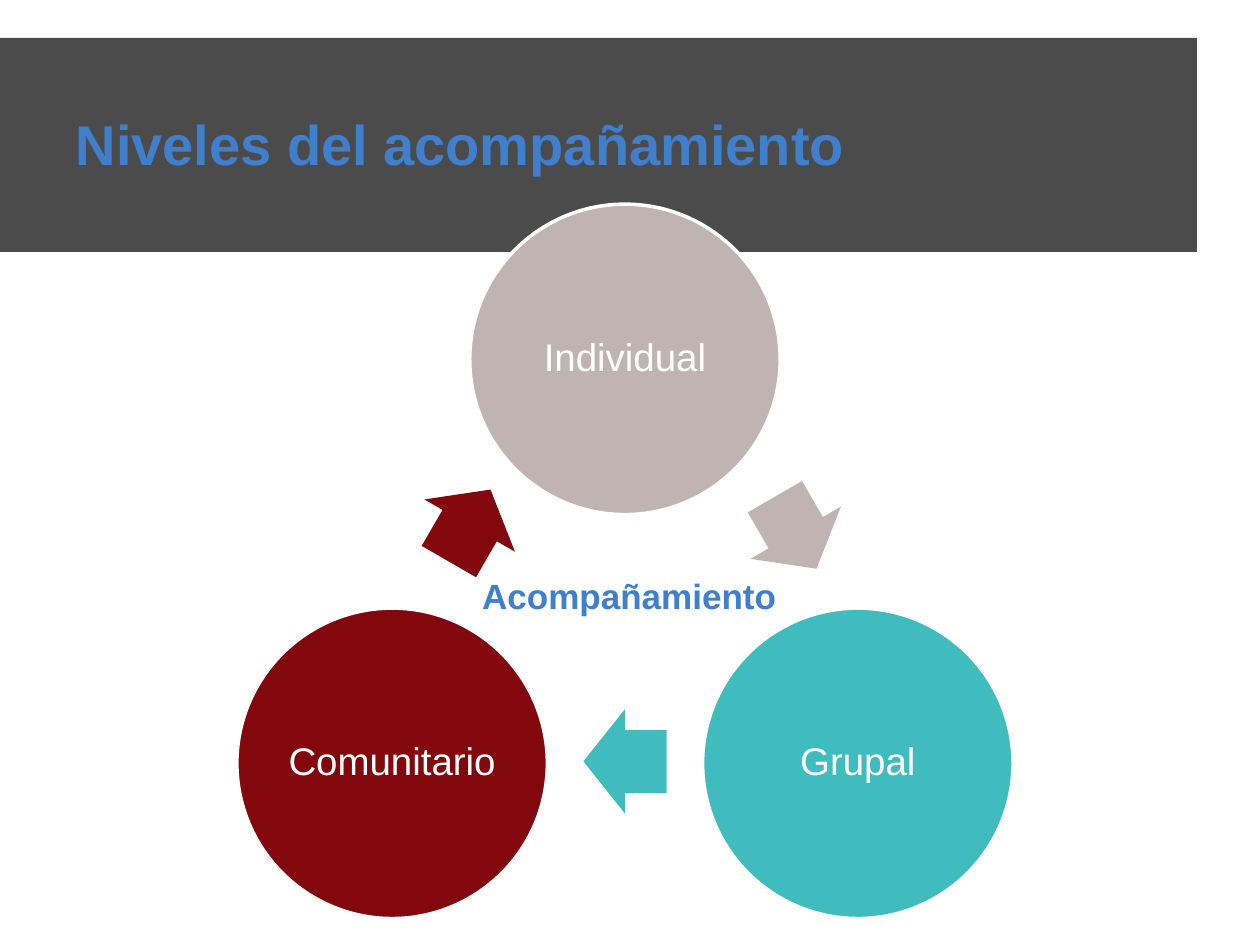
from lxml.etree import SubElement
from pptx import Presentation
from pptx.dml.color import RGBColor
from pptx.enum.shapes import MSO_SHAPE as Shape
from pptx.enum.text import MSO_ANCHOR as Anchor, PP_ALIGN as Align
from pptx.util import Inches, Pt

WIDTH, HEIGHT = 10, 7.5
COLORS = {
    "band": "4B4B4B",
    "accent": "407FCC",
    "white": "FFFFFF",
    "individual": "C0B4B3",
    "grupal": "41BCBE",
    "comunitario": "83080D",
}
LEVELS = [
    ("Individual", "individual", (0.3, 0), (0.72, 0.46), 60),
    ("Grupal", "grupal", (0.6, 1), (0.5, 0.78), 180),
    ("Comunitario", "comunitario", (0, 1), (0.3, 0.45), 300),
]


def rgb(name):
    """Return the named palette colour."""
    return RGBColor.from_string(COLORS[name])


def write(frame, text, size, color, bold=False, align=Align.LEFT,
          anchor=Anchor.MIDDLE, wrap=True, spacing=1.0, inset=None):
    """Write one formatted paragraph into a text frame."""
    frame.word_wrap = wrap
    frame.vertical_anchor = anchor
    if inset is not None:
        frame.margin_left = frame.margin_right = Inches(inset)
        frame.margin_top = frame.margin_bottom = Inches(inset)
    paragraph = frame.paragraphs[0]
    paragraph.alignment = align
    paragraph.line_spacing = spacing
    run = paragraph.add_run()
    run.text = text
    run.font.name = "Arial"
    run.font.size = Pt(size)
    run.font.bold = bold
    run.font.color.rgb = rgb(color)


def add_filled(slide, kind, box, color, border=None):
    """Add a flat preset shape with an optional border."""
    shape = slide.shapes.add_shape(kind, *map(Inches, box))
    shape.shadow.inherit = False
    shape.fill.solid()
    shape.fill.fore_color.rgb = rgb(color)
    if border:
        shape.line.color.rgb = rgb(border)
        shape.line.width = Pt(2)
    else:
        shape.line.fill.background()
    return shape


def add_header(slide, box):
    """Place the dark band and the title over it."""
    left, top, width, height = box
    band = add_filled(slide, Shape.RECTANGLE, box, "band")
    title = slide.shapes.title
    title.element.addprevious(band.element)
    title.left, title.top = Inches(left + 0.05 * WIDTH), Inches(top)
    title.width, title.height = Inches(0.9 * WIDTH), Inches(height * 0.98)
    write(title.text_frame, "Niveles del acompañamiento", 32, "accent", bold=True)


def add_cycle(slide, box):
    """Place the three levels, the arrows between them and the central label."""
    left, top, width, height = box
    diameter = 0.4 * width
    arrow_width, arrow_height = 0.66, 0.83
    for name, color, (column, row), (across, down), angle in LEVELS:
        level = add_filled(
            slide, Shape.OVAL,
            (left + column * width, top + row * (height - diameter), diameter, diameter),
            color, border="white")
        write(level.text_frame, name, 22, "white", align=Align.CENTER,
              wrap=False, spacing=0.9, inset=0.03)
        arrow = add_filled(
            slide, Shape.RIGHT_ARROW,
            (left + across * width - arrow_width / 2,
             top + down * height - arrow_height / 2, arrow_width, arrow_height),
            color)
        arrow.adjustments[0], arrow.adjustments[1] = 0.6, 0.5
        arrow.rotation = angle
    label = slide.shapes.add_textbox(
        Inches(left + 0.3 * width), Inches(top + 0.51 * height),
        Inches(0.46 * width), Inches(0.44))
    write(label.text_frame, "Acompañamiento", 20, "accent", bold=True, anchor=Anchor.TOP)


def main():
    """Build and save the slide."""
    deck = Presentation()
    deck.slide_width, deck.slide_height = Inches(WIDTH), Inches(HEIGHT)
    slide = deck.slides.add_slide(deck.slide_layouts[5])
    add_header(slide, (0, 0.04 * HEIGHT, 0.95 * WIDTH, 1.7))
    add_cycle(slide, (1.88, 1.62, 6.16, 5.67))
    deck.save("out.pptx")


if __name__ == "__main__":
    main()
